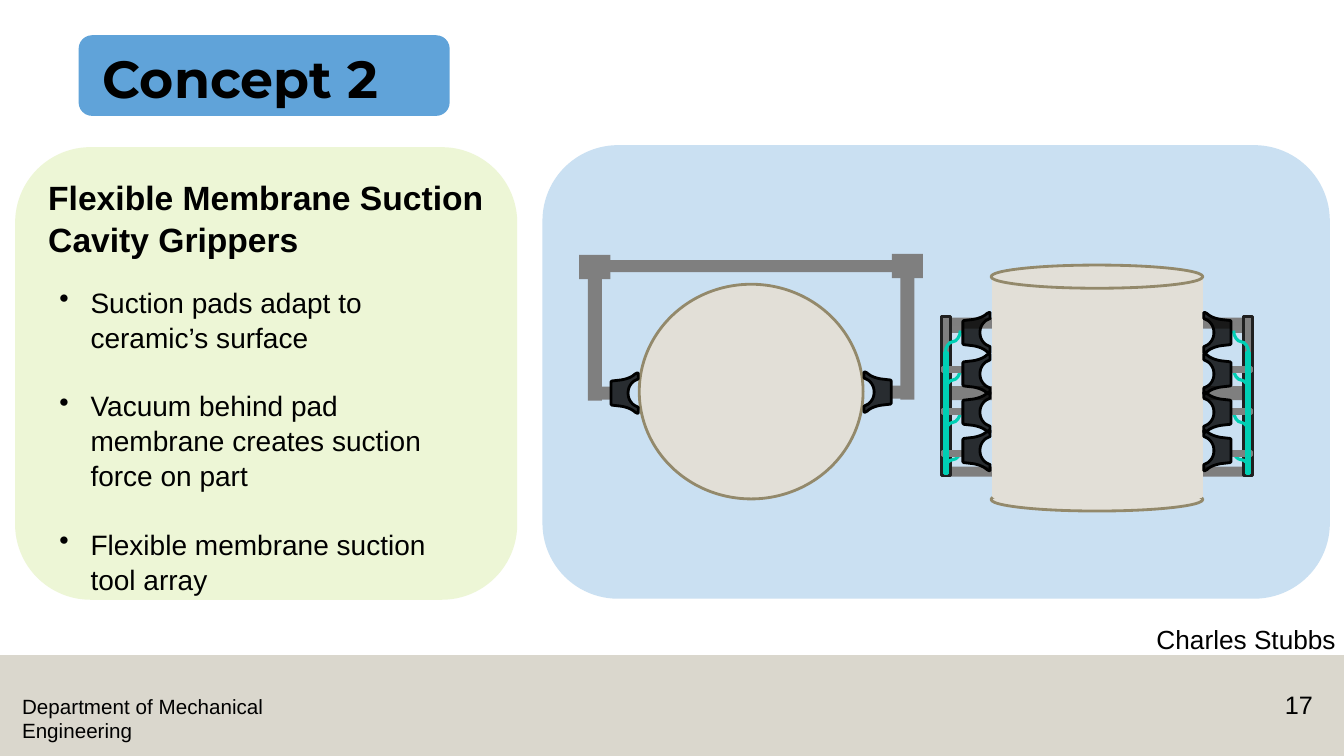
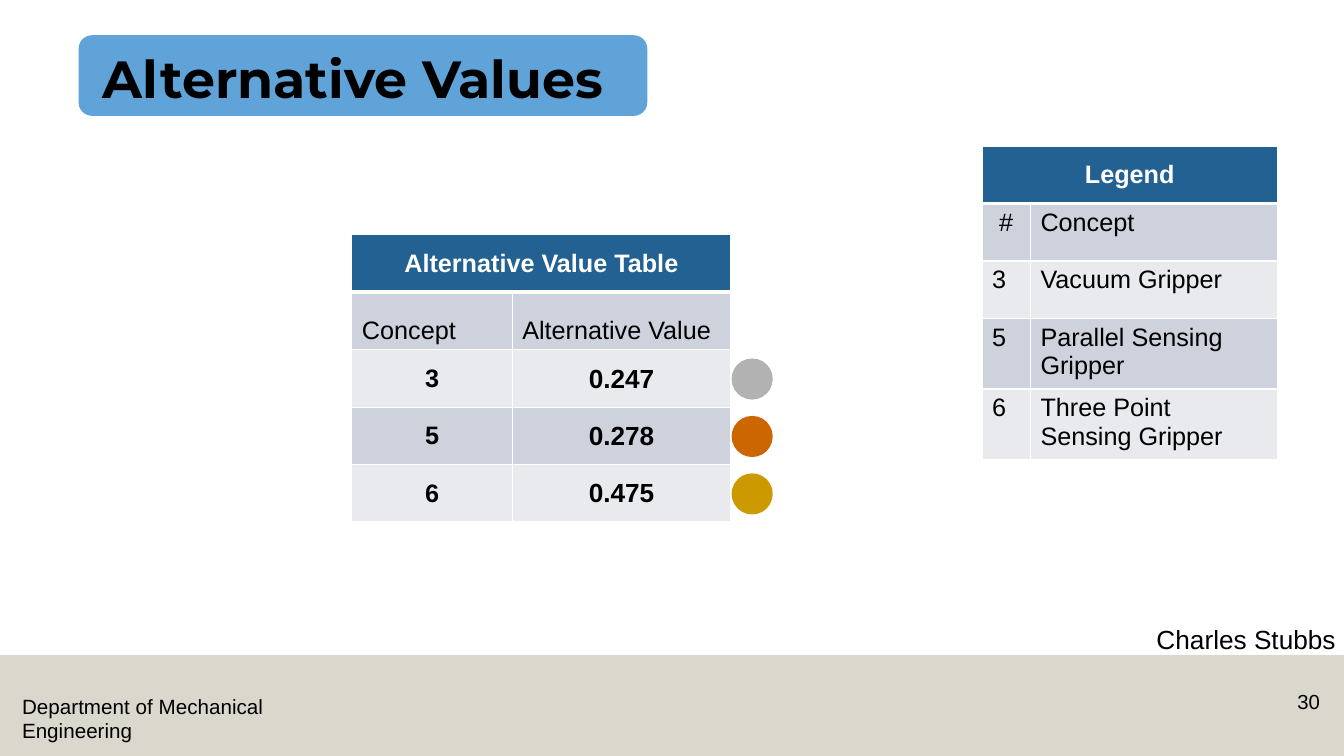
from lxml import etree
from pptx import Presentation
from pptx.dml.color import RGBColor
from pptx.enum.shapes import MSO_CONNECTOR, MSO_SHAPE
from pptx.enum.text import MSO_ANCHOR, PP_ALIGN
from pptx.oxml.ns import qn
from pptx.util import Inches, Pt

RECTANGLE, ROUNDED, OVAL = MSO_SHAPE.RECTANGLE, MSO_SHAPE.ROUNDED_RECTANGLE, MSO_SHAPE.OVAL
CURVE = MSO_CONNECTOR.CURVE
LEFT, CENTER, RIGHT = PP_ALIGN.LEFT, PP_ALIGN.CENTER, PP_ALIGN.RIGHT
TOP, MIDDLE, BOTTOM = MSO_ANCHOR.TOP, MSO_ANCHOR.MIDDLE, MSO_ANCHOR.BOTTOM

COLORS = {
    "black": "000000", "white": "FFFFFF", "band": "B7B09C", "title": "60A3D9",
    "green panel": "EDF6D6", "blue panel": "CAE0F2", "ceramic": "E2DFD7",
    "ceramic edge": "93896B", "steel": "7F7F7F", "strut": "808080",
    "rail edge": "202020", "hose": "00CFB4", "header": "236192",
    "odd row": "CDD2DC", "even row": "E8EAEE",
    "silver": "B2B2B2", "bronze": "CC6600", "gold": "CC9900",
}
BODY_FONT, TITLE_FONT = "Arial", "Montserrat"
INSETS = (0.1, 0.05, 0.1, 0.05)
GRIPPER_AXIS, CYLINDER_AXIS = 7.45, 10.88
CURVE_STEPS = 8


def color(name):
    return RGBColor.from_string(COLORS[name])


def style_shape(shape, fill, line=None, width=2, alpha=None):
    shape.shadow.inherit = False
    shape.fill.solid()
    shape.fill.fore_color.rgb = color(fill)
    if alpha:
        tint = shape.element.spPr.find(qn("a:solidFill"))[0]
        etree.SubElement(tint, qn("a:alpha"), val=str(alpha * 1000))
    if line:
        shape.line.color.rgb = color(line)
        shape.line.width = Pt(width)
    else:
        shape.line.fill.background()


def add_box(slide, kind, left, top, width, height, fill, line=None, line_width=2, alpha=None):
    shape = slide.shapes.add_shape(kind, Inches(left), Inches(top), Inches(width), Inches(height))
    style_shape(shape, fill, line, line_width, alpha)


def add_run(paragraph, text, size, bold=False, ink="black", font=BODY_FONT):
    run = paragraph.add_run()
    run.text = text
    run.font.name = font
    run.font.size = Pt(size)
    run.font.bold = bold
    run.font.color.rgb = color(ink)


def set_insets(target, insets):
    target.margin_left, target.margin_top, target.margin_right, target.margin_bottom = map(Inches, insets)


def add_frame(slide, left, top, width, height, anchor=TOP, insets=INSETS):
    box = slide.shapes.add_textbox(Inches(left), Inches(top), Inches(width), Inches(height))
    frame = box.text_frame
    frame.word_wrap = True
    frame.vertical_anchor = anchor
    set_insets(frame, insets)
    return frame


def add_label(slide, left, top, width, height, text, size, bold=False, font=BODY_FONT,
              align=LEFT, spacing=1.0, anchor=TOP, insets=INSETS):
    frame = add_frame(slide, left, top, width, height, anchor, insets)
    paragraph = frame.paragraphs[0]
    paragraph.alignment = align
    paragraph.line_spacing = spacing
    add_run(paragraph, text, size, bold, font=font)


def add_bullets(slide, left, top, width, height, items, size):
    frame = add_frame(slide, left, top, width, height)
    for index, item in enumerate(items):
        paragraph = frame.add_paragraph() if index else frame.paragraphs[0]
        properties = paragraph._p.get_or_add_pPr()
        properties.set("marL", str(Inches(0.31)))
        properties.set("indent", str(-Inches(0.31)))
        etree.SubElement(properties, qn("a:buChar"), char="•")
        paragraph.line_spacing = 1.04
        if index:
            paragraph.space_before = Pt(24)
        add_run(paragraph, item, size)


def add_base(presentation, title, title_width, number, number_right, number_size):
    slide = presentation.slides.add_slide(presentation.slide_layouts[6])
    add_box(slide, RECTANGLE, 0, 6.5, 13.33, 1, "band", alpha=50)
    add_label(slide, 0.12, 6.83, 3.59, 0.59, "Department of Mechanical Engineering", 14.7)
    add_box(slide, ROUNDED, 0.78, 0.35, title_width, 0.8, "title")
    add_label(slide, 0.92, 0.05, 11.5, 1.09, title, 37.3, True, TITLE_FONT,
              spacing=0.9, anchor=BOTTOM)
    add_label(slide, 11.34, 6.05, 1.99, 0.58, "Charles Stubbs", 18.7,
              insets=(0.13, 0.13, 0.05, 0.13))
    add_label(slide, number_right - 0.77, 6.79, 0.77, 0.4, number, number_size, align=RIGHT)
    return slide


def bezier(start, first, second, end):
    points = []
    for step in range(1, CURVE_STEPS + 1):
        t = step / CURVE_STEPS
        weights = ((1 - t) ** 3, 3 * t * (1 - t) ** 2, 3 * t * t * (1 - t), t ** 3)
        points.append(tuple(sum(weight * point[axis] for weight, point in
                                zip(weights, (start, first, second, end))) for axis in (0, 1)))
    return points


def pad_outline():
    upper = [(0.27, -0.2), (0.26, -0.2), (0.24, -0.19)]
    upper += bezier(upper[-1], (0.21, -0.16), (0.16, -0.14), (0.1, -0.13))
    upper += [(0.01, -0.12), (0, -0.11)]
    cup = [(0.17, 0)] + bezier((0.17, 0), (0.17, -0.05), (0.19, -0.09), (0.23, -0.12))
    cup.append((0.27, -0.14))
    lower = [(x, -y) for x, y in reversed(upper)]
    return upper + lower + [(x, -y) for x, y in reversed(cup)] + cup[1:]


def add_pad(slide, axis, side, back, middle):
    points = [(Inches(axis + side * (back - x)), Inches(middle + y)) for x, y in pad_outline()]
    builder = slide.shapes.build_freeform(*points[0], scale=1.0)
    builder.add_line_segments(points[1:], close=True)
    style_shape(builder.convert_to_shape(), "black", "black", alpha=80)


def add_mirrored_box(slide, axis, side, offset, middle, width, height, fill, line=None, line_width=2):
    add_box(slide, RECTANGLE, axis + side * offset - width / 2, middle - height / 2,
            width, height, fill, line, line_width)


def add_hose(slide, side, top, height):
    width = 0.15
    middle_x, middle_y = CYLINDER_AXIS + side * 1.43, top + height / 2
    begin_x, end_x = middle_x + side * height / 2, middle_x - side * height / 2
    connector = slide.shapes.add_connector(
        CURVE, Inches(begin_x), Inches(middle_y - width / 2),
        Inches(end_x), Inches(middle_y + width / 2))
    connector.line.color.rgb = color("hose")
    connector.line.width = Pt(2.25)
    properties = connector.element.spPr
    properties.find(qn("a:xfrm")).set("rot", "5400000" if side > 0 else "16200000")
    etree.SubElement(properties, qn("a:effectLst"))


def add_gripper_arm(slide, side, middle):
    for offset, below, width, height in ((1.5, 1.25, 0.22, 0.13), (1.55, 0.71, 0.14, 1.23),
                                         (1.55, 0, 0.31, 0.24)):
        add_mirrored_box(slide, GRIPPER_AXIS, side, offset, middle + below, width, height, "steel")
    add_pad(slide, GRIPPER_AXIS, side, 1.39, middle + 1.25)


def add_pad_array(slide, side):
    def add_strut(middle):
        add_mirrored_box(slide, CYLINDER_AXIS, side, 1.44, middle, 0.19, 0.04, "strut", "strut")

    add_strut(3.27)
    add_mirrored_box(slide, CYLINDER_AXIS, side, 1.5, 3.93, 0.09, 1.58, "strut", "rail edge")
    for top, height in ((3.28, 0.22), (3.66, 0.22), (4.08, 0.22), (4.47, 0.18)):
        add_hose(slide, side, top, height)
    for middle in (3.67, 4.08, 4.5):
        add_strut(middle)
    add_mirrored_box(slide, CYLINDER_AXIS, side, 1.5, 4.1, 0.03, 1.2, "hose", "hose", 2.25)
    for middle in (3.3, 3.71, 4.09, 4.47):
        add_pad(slide, CYLINDER_AXIS, side, 1.33, middle)


def set_borders(cell, top, bottom):
    properties = cell._tc.get_or_add_tcPr()
    for index, (edge, width) in enumerate((("L", 1), ("R", 1), ("T", top), ("B", bottom))):
        border = etree.Element(qn("a:ln" + edge), w=str(Pt(width)))
        solid = etree.SubElement(border, qn("a:solidFill"))
        etree.SubElement(solid, qn("a:srgbClr"), val=COLORS["white"])
        properties.insert(index, border)


def fill_cell(cell, row, text, size=18, bold=False, align=LEFT, anchor=TOP, ink="black"):
    cell.fill.solid()
    cell.fill.fore_color.rgb = color("header" if row == 0 else "odd row" if row % 2 else "even row")
    cell.vertical_anchor = anchor
    set_borders(cell, 3 if row == 1 else 1, 1 if row else 3)
    if text:
        paragraph = cell.text_frame.paragraphs[0]
        paragraph.alignment = align
        add_run(paragraph, text, size, bold, ink)


def add_titled_table(slide, left, top, widths, title, rows, style_of):
    height = 0.57
    count = len(rows) + 1
    table = slide.shapes.add_table(count, len(widths), Inches(left), Inches(top),
                                   Inches(sum(widths)), Inches(height * count)).table
    for column, width in zip(table.columns, widths):
        column.width = Inches(width)
    for row in table.rows:
        row.height = Inches(height)
    table.cell(0, 0).merge(table.cell(0, len(widths) - 1))
    for column in range(len(widths)):
        fill_cell(table.cell(0, column), 0, "" if column else title, bold=True,
                  align=CENTER, anchor=MIDDLE, ink="white")
    for row, texts in enumerate(rows, 1):
        for column, text in enumerate(texts):
            fill_cell(table.cell(row, column), row, text, **style_of(row, column))
    return table


def value_style(row, column):
    if row == 1:
        return {"anchor": BOTTOM}
    return {"size": 18.7 if column else 18, "bold": True, "align": CENTER, "anchor": MIDDLE}


def legend_style(row, column):
    return {"align": CENTER if (row, column) == (1, 0) else LEFT}


def build_concept(presentation):
    slide = add_base(presentation, "Concept 2", 3.68, "17", 13.12, 18)
    add_box(slide, ROUNDED, 5.38, 1.44, 7.81, 4.5, "blue panel")
    for top, height in ((3.83, 0.14), (4.63, 0.1), (3.15, 0.11)):
        add_box(slide, RECTANGLE, 9.36, top, 3.03, height, "steel")
    add_box(slide, OVAL, 9.83, 4.84, 2.1, 0.23, "ceramic", "ceramic edge")
    add_box(slide, RECTANGLE, 9.85, 2.77, 2.07, 2.16, "ceramic", "ceramic")
    add_box(slide, OVAL, 9.83, 2.63, 2.1, 0.23, "ceramic", "ceramic edge")
    add_box(slide, OVAL, 6.34, 2.82, 2.22, 2.13, "ceramic", "ceramic edge")
    add_box(slide, RECTANGLE, 5.81, 2.58, 3.27, 0.12, "steel")
    add_box(slide, ROUNDED, 0.15, 1.46, 4.98, 4.49, "green panel")
    add_label(slide, 0.38, 1.69, 4.59, 0.91, "Flexible Membrane Suction Cavity Grippers",
              24, True, spacing=1.04)
    for side, middle in ((1, 2.64), (-1, 2.65)):
        add_gripper_arm(slide, side, middle)
        add_pad_array(slide, side)
    add_bullets(slide, 0.49, 2.77, 4.27, 3.13, (
        "Suction pads adapt to ceramic’s surface",
        "Vacuum behind pad membrane creates suction force on part",
        "Flexible membrane suction tool array"), 20)


def build_values(presentation):
    slide = add_base(presentation, "Alternative Values", 5.64, "30", 13.19, 14.5)
    values = add_titled_table(slide, 3.49, 2.33, (1.59, 2.17), "Alternative Value Table", (
        ("Concept", "Alternative Value"), ("3", "0.247"), ("5", "0.278"), ("6", "0.475")),
        value_style)
    for row in range(2, 5):
        set_insets(values.cell(row, 1), (0.01, 0.01, 0.01, 0))
    add_titled_table(slide, 9.74, 1.45, (0.48, 2.45), "Legend", (
        ("#", "Concept"), ("3", "Vacuum Gripper"), ("5", "Parallel Sensing Gripper"),
        ("6", "Three Point Sensing Gripper")), legend_style)
    for index, medal in enumerate(("silver", "bronze", "gold")):
        add_box(slide, OVAL, 7.27, 3.57 + 0.57 * index, 0.38, 0.38, medal, medal)


def main():
    presentation = Presentation()
    presentation.slide_width, presentation.slide_height = Inches(13.33), Inches(7.5)
    build_concept(presentation)
    build_values(presentation)
    presentation.save("out.pptx")


if __name__ == "__main__":
    main()
